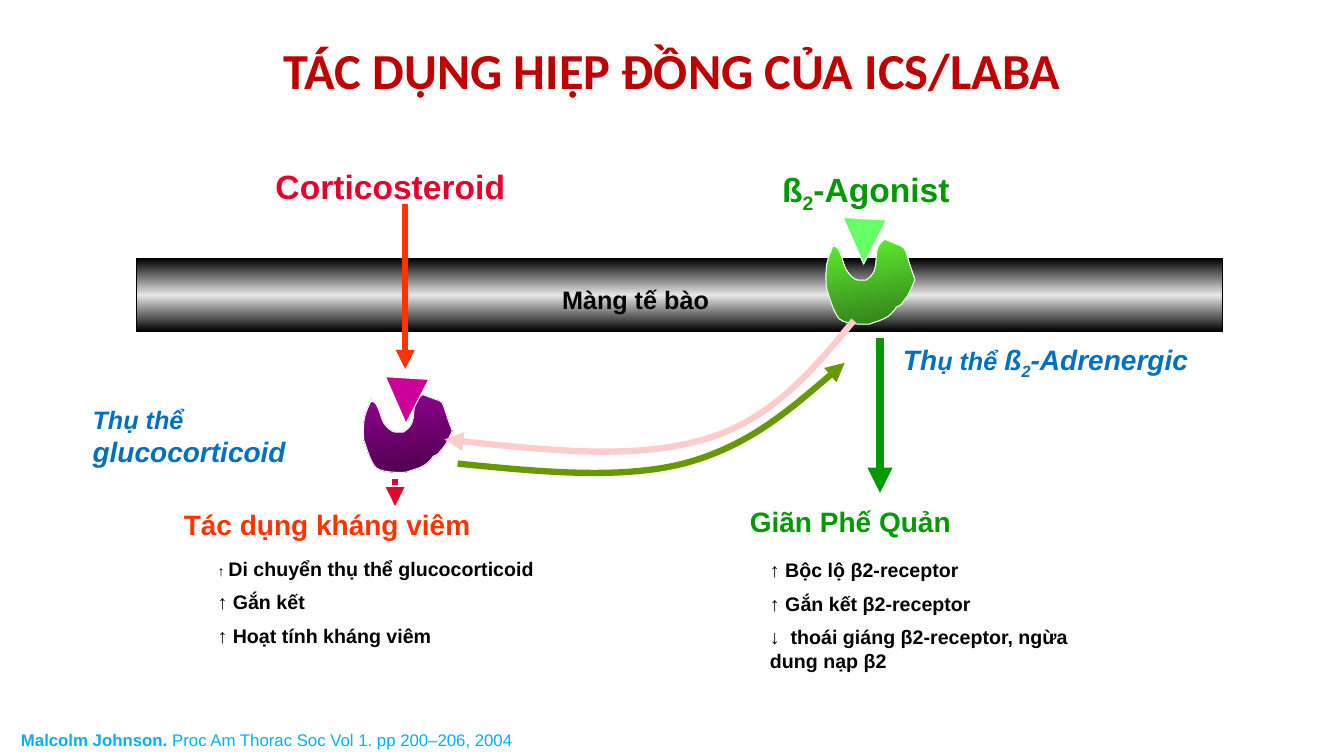
"""Build a slide on the synergy of inhaled corticosteroids and beta-2 agonists."""
from lxml import etree
from pptx import Presentation
from pptx.dml.color import RGBColor
from pptx.enum.dml import MSO_LINE
from pptx.enum.shapes import MSO_CONNECTOR, MSO_SHAPE
from pptx.enum.text import MSO_AUTO_SIZE, PP_ALIGN
from pptx.oxml.ns import qn
from pptx.util import Inches, Pt

RECTANGLE = MSO_SHAPE.RECTANGLE
TRIANGLE = MSO_SHAPE.ISOSCELES_TRIANGLE
STRAIGHT = MSO_CONNECTOR.STRAIGHT
LEFT, CENTER = PP_ALIGN.LEFT, PP_ALIGN.CENTER
DOTTED = MSO_LINE.ROUND_DOT
FIT_SHAPE = MSO_AUTO_SIZE.SHAPE_TO_FIT_TEXT

CELL = Inches(0.1)
COLUMNS, ROWS = 133.33, 75

COLORS = {
    "black": "000000", "silver": "E6E6E6", "white": "FFFFFF",
    "title": "C00000", "steroid": "E6002C", "orange": "FF3300",
    "agonist": "009900", "receptor label": "0070C0", "citation": "00B0F0",
    "olive": "669900", "pink": "FFCCCC", "magenta": "CC0099", "lime": "66FF66",
    "purple": "990099", "dark purple": "470047",
    "green": "66FF33", "dark green": "2F7618",
}

RECEPTOR_OUTLINE = [
    (15, 7),
    (14, 10), (13, 12), (12, 14), (10, 18), (8, 20), (7, 23),
    (2, 33), (1, 45), (0, 55), (2, 66), (3, 77), (7, 87),
    (10, 97), (31, 100), (41, 101), (48, 99), (59, 99), (66, 93),
    (81, 81), (63, 91), (78, 85), (82, 80), (86, 78), (89, 73),
    (92, 69), (97, 60), (97, 60), (87, 13), (98, 30), (71, 12),
    (51, 21), (66, 43), (44, 53), (38, 52), (34, 53), (30, 48),
    (27, 45), (24, 38), (24, 38), (22, 31), (22, 23), (19, 15),
    (13, 4), (7, 22), (15, 7),
]


def grid(*cells):
    """Turn numbers of grid cells into lengths."""
    return [round(cell * CELL) for cell in cells]


def color(name):
    """Look up a named colour."""
    return RGBColor.from_string(COLORS[name])


def set_line(line, name, width):
    """Set the colour and width of a line."""
    line.color.rgb = color(name)
    line.width = Pt(width)


def set_arrowhead(shape):
    """Put a triangular head at the end of a line."""
    line = shape.line._get_or_add_ln()
    etree.SubElement(line, qn("a:tailEnd"), type="triangle")


def set_gradient(shape, names):
    """Fill a shape from top to bottom with evenly spaced colours."""
    shape.fill.gradient()
    shape.fill.gradient_angle = 270
    stops = shape._element.spPr.find(".//" + qn("a:gsLst"))
    for stop in list(stops):
        stops.remove(stop)
    for index, name in enumerate(names):
        position = str(100000 * index // (len(names) - 1))
        stop = etree.SubElement(stops, qn("a:gs"), pos=position)
        etree.SubElement(stop, qn("a:srgbClr"), val=COLORS[name])


def add_curve(slide, points, close):
    """Draw cubic curves through a start point and triples of two handles and an end."""
    lengths = [grid(*point) for point in points]
    builder = slide.shapes.build_freeform(*lengths[0])
    builder.add_line_segments(lengths[1:], close=close)
    shape = builder.convert_to_shape()
    shape.shadow.inherit = False
    segments = list(shape._element.iter(qn("a:lnTo")))
    for start in range(0, len(points) - 1, 3):
        curve = etree.Element(qn("a:cubicBezTo"))
        segments[start].addprevious(curve)
        for segment in segments[start:start + 3]:
            curve.append(segment[0])
    for segment in segments:
        segment.getparent().remove(segment)
    return shape


def add_receptor(slide, left, top, width, height, names):
    """Draw a cup-shaped receptor."""
    points = [(left + width * x / 100, top + height * y / 100) for x, y in RECEPTOR_OUTLINE]
    shape = add_curve(slide, points, True)
    shape.rotation = 351.6
    set_gradient(shape, names)
    set_line(shape.line, "white", 0.75)


def add_curved_arrow(slide, points, name):
    """Draw a curved arrow."""
    shape = add_curve(slide, points, False)
    shape.fill.background()
    set_line(shape.line, name, 4.5)
    set_arrowhead(shape)


def add_down_arrow(slide, column, top, bottom, name, width, dash=None):
    """Draw a straight arrow pointing down."""
    connector = slide.shapes.add_connector(STRAIGHT, *grid(column, top, column, bottom))
    set_line(connector.line, name, width)
    if dash:
        connector.line.dash_style = dash
    set_arrowhead(connector)
    etree.SubElement(connector._element.spPr, qn("a:effectLst"))


def add_ligand(slide, left, top, name):
    """Draw a triangular ligand pointing down."""
    shape = slide.shapes.add_shape(TRIANGLE, *grid(left, top, 4.3, 4.5))
    shape.adjustments[0] = 0.463
    shape.rotation = 183.5
    shape.shadow.inherit = False
    shape.fill.solid()
    shape.fill.fore_color.rgb = color(name)
    set_line(shape.line, "white", 0.75)


def add_membrane(slide):
    """Draw the cell membrane."""
    shape = slide.shapes.add_shape(RECTANGLE, *grid(13.55, 25.65, 107.7, 7.25))
    shape.shadow.inherit = False
    set_gradient(shape, ["black", "silver", "black"])
    set_line(shape.line, "black", 0.75)


def add_text(slide, box, paragraphs, name, size, wrap=False, align=LEFT,
             font="Arial", bold=True, italic=False, gap=0):
    """Add paragraphs of (text, size, bold, baseline) runs; plain strings take the defaults."""
    frame = slide.shapes.add_textbox(*grid(*box)).text_frame
    frame.word_wrap = wrap
    frame.auto_size = FIT_SHAPE
    for index, runs in enumerate(paragraphs):
        paragraph = frame.add_paragraph() if index else frame.paragraphs[0]
        paragraph.alignment = align
        paragraph.space_before = Pt(gap if index else 0)
        paragraph.font.name = font
        paragraph.font.size = Pt(size)
        paragraph.font.bold = bold
        paragraph.font.italic = italic
        paragraph.font.color.rgb = color(name)
        for item in runs:
            text, run_size, run_bold, baseline = (
                (item, None, None, 0) if isinstance(item, str) else item)
            run = paragraph.add_run()
            run.text = text
            run.font.size = Pt(run_size) if run_size else None
            run.font.bold = run_bold
            if baseline:
                run.font._element.set("baseline", str(baseline * 1000))


def main():
    """Build and save the slide."""
    presentation = Presentation()
    presentation.slide_width, presentation.slide_height = grid(COLUMNS, ROWS)
    slide = presentation.slides.add_slide(presentation.slide_layouts[6])
    subscript = ("2", None, None, -25)

    add_membrane(slide)
    add_receptor(slide, 36, 38.4, 9.1, 8.3, ["purple", "dark purple"])
    add_receptor(slide, 81.9, 22.9, 9.1, 9.1, ["green", "dark green"])
    add_text(slide, (8.2, 39.6, 22.1, 7.5), [[("Thụ thể", 18, None, 0)], ["glucocorticoid"]],
             "receptor label", 20, italic=True)
    add_text(slide, (88.6, 33.5, 30.7, 4.4),
             [["Th", ("ụ thể ", 18, None, 0), "ß", subscript, "-Adrenergic"]],
             "receptor label", 20, italic=True)
    add_curved_arrow(slide, [(45.4, 46), (53.4, 46.8), (61.4, 47.6), (67.8, 46),
                             (74.2, 44.3), (79, 40.1), (83.8, 36)], "olive")
    add_ligand(slide, 38.1, 37.5, "magenta")
    add_text(slide, (26.35, 16, 25, 5.1), [["Corticosteroid"]], "steroid", 24)
    add_down_arrow(slide, 40.2, 20.2, 36.6, "orange", 4.5)
    add_text(slide, (17.25, 49.9, 30.7, 4.4), [["Tác dụng kháng viêm"]], "orange", 20)
    add_down_arrow(slide, 39.2, 47.5, 50.2, "steroid", 4.5, DOTTED)
    add_text(slide, (76.6, 16.25, 19, 5.1), [["ß", subscript, "-Agonist"]], "agonist", 24)
    add_ligand(slide, 83.5, 21.7, "lime")
    add_text(slide, (73.4, 49.55, 22.1, 4.4), [["Giãn Phế Quản"]], "agonist", 20)
    add_down_arrow(slide, 87.3, 33.5, 48.9, "agonist", 6)
    add_text(slide, (20.6, 54.75, 39.9, 10.5),
             [[("↑ ", 10, None, 0), "Di chuyển thụ thể glucocorticoid"],
              ["↑ Gắn kết"], ["↑ Hoạt tính kháng viêm"]], "black", 14, wrap=True, gap=7)
    add_text(slide, (75.4, 54.9, 35.8, 12.8),
             [["↑ Bộc lộ β2-receptor"], ["↑ Gắn kết β2-receptor"],
              ["↓  thoái giáng β2-receptor, ngừa dung nạp β2"]], "black", 14, wrap=True, gap=7)
    add_curved_arrow(slide, [(84.7, 31.8), (80.6, 36.8), (76.5, 41.7), (69.8, 43.6),
                             (63, 45.6), (53.6, 44.6), (44.1, 43.6)], "pink")
    add_text(slide, (48.6, 27.7, 28.9, 4), [["Màng tế bào"]], "black", 18, wrap=True, align=CENTER)
    add_text(slide, (1.1, 71.9, 51.2, 3),
             [[("Malcolm Johnson. ", None, True, 0), "Proc Am Thorac Soc Vol 1. pp 200–206, 2004"]],
             "citation", 12, bold=False)
    add_text(slide, (11.7, 3.35, 110, 9.2), [["TÁC DỤNG HIỆP ĐỒNG CỦA ICS/LABA"]],
             "title", 36, wrap=True, align=CENTER, font="Calibri")
    presentation.save("out.pptx")


if __name__ == "__main__":
    main()
